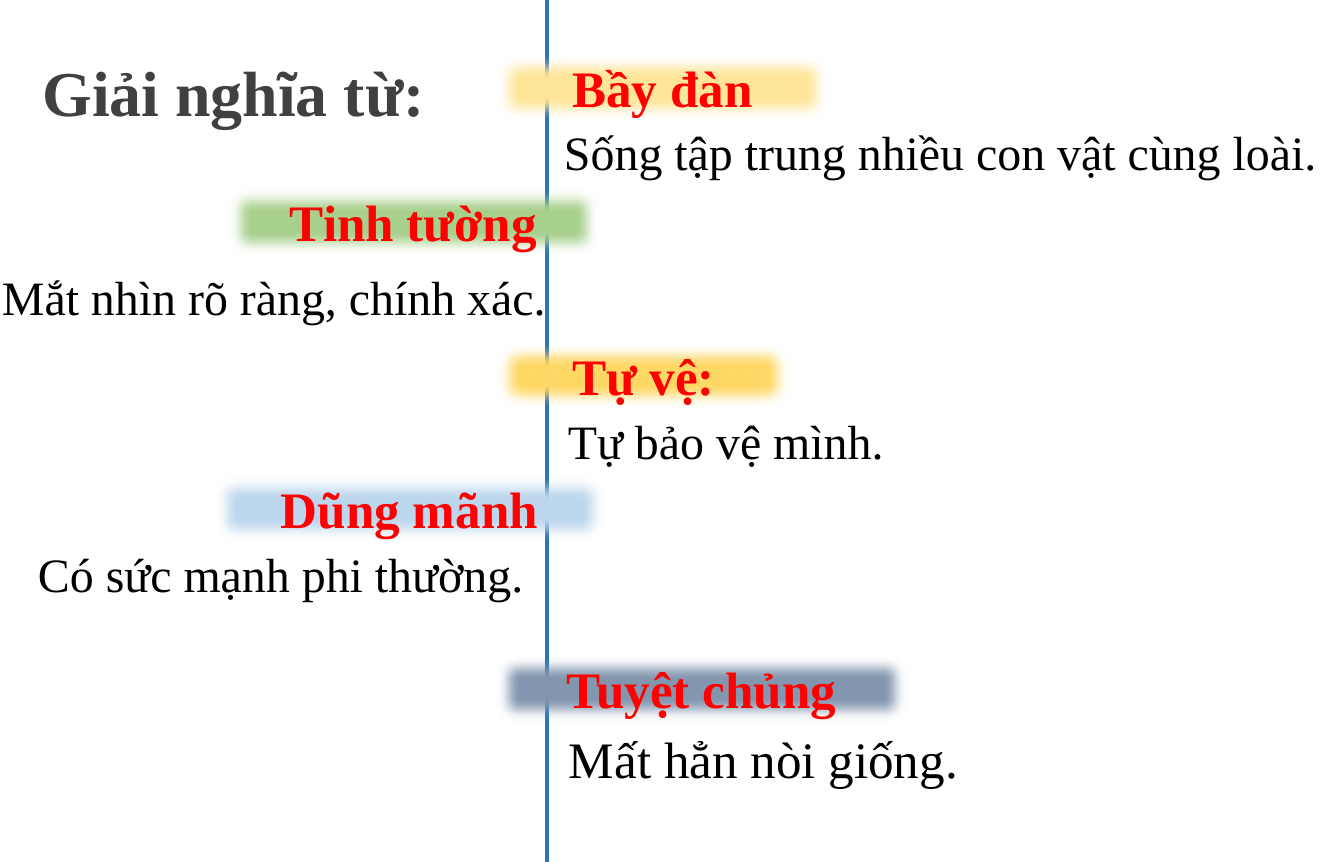
from dataclasses import dataclass

from lxml import etree
from pptx import Presentation
from pptx.dml.color import RGBColor
from pptx.enum.shapes import MSO_CONNECTOR, MSO_SHAPE
from pptx.enum.text import MSO_ANCHOR, PP_ALIGN
from pptx.oxml.ns import qn
from pptx.util import Emu, Pt

LEFT, CENTER, JUSTIFY = PP_ALIGN.LEFT, PP_ALIGN.CENTER, PP_ALIGN.JUSTIFY
TOP, MIDDLE = MSO_ANCHOR.TOP, MSO_ANCHOR.MIDDLE
RECTANGLE, STRAIGHT = MSO_SHAPE.RECTANGLE, MSO_CONNECTOR.STRAIGHT

PX_PER_INCH = 115
PAGE_WIDTH, PAGE_HEIGHT = 1344, 862
AXIS_X = 547
BAND_HEIGHT = 79


@dataclass(frozen=True)
class Theme:
    font: str = "Times New Roman"
    title: str = "404040"
    title_outline: str = "0D0D0D"
    term: str = "FF0000"
    meaning: str = "000000"
    axis: str = "2E75B6"
    title_size: int = 40
    term_size: int = 32
    meaning_size: int = 30


THEME = Theme()

# term, band colour, band (left, top, width),
# meaning, its box (left, top, width, height), alignment, size
ENTRIES = [
    ("Bầy đàn", "FFE699", (490, 48, 345),
     "Sống tập trung nhiều con vật cùng loài.", (547, 115, 797, 75),
     LEFT, THEME.meaning_size),
    ("Tinh tường", "A9D18E", (222, 182, 383),
     "Mắt nhìn rõ ràng, chính xác.", (-15, 260, 783, 75),
     LEFT, THEME.meaning_size),
    ("Tự vệ:", "FFD966", (490, 336, 307),
     "Tự bảo vệ mình.", (551, 404, 783, 75),
     LEFT, THEME.meaning_size),
    ("Dũng mãnh", "BDD7EE", (208, 469, 403),
     "Có sức mạnh phi thường.", (21, 537, 567, 75),
     JUSTIFY, THEME.meaning_size),
    ("Tuyệt chủng", "8497B0", (490, 649, 423),
     "Mất hẳn nòi giống.", (552, 719, 628, 79),
     LEFT, THEME.term_size),
]


def px(length):
    return Emu(round(length * 914400 / PX_PER_INCH))


def color(value):
    return RGBColor.from_string(value)


def write(shape, text, size, ink, bold=False, align=LEFT, anchor=TOP,
          insets=(17, 8)):
    frame = shape.text_frame
    frame.word_wrap = True
    frame.vertical_anchor = anchor
    frame.margin_left = frame.margin_right = px(insets[0])
    frame.margin_top = frame.margin_bottom = px(insets[1])
    para = frame.paragraphs[0]
    para.alignment = align
    span = para.add_run()
    span.text = text
    span.font.name = THEME.font
    span.font.size = Pt(size)
    span.font.bold = bold
    span.font.color.rgb = color(ink)
    return span


def add_title(page, box):
    title = page.shapes.add_textbox(*map(px, box))
    span = write(title, "Giải nghĩa từ:", THEME.title_size, THEME.title,
                 True, CENTER, MIDDLE, (14, 7))
    # Thin outline around the letters
    properties = span.font._element
    outline = etree.Element(qn("a:ln"), w=str(Pt(1.5)))
    fill = etree.SubElement(outline, qn("a:solidFill"))
    etree.SubElement(fill, qn("a:srgbClr"), val=THEME.title_outline)
    properties.insert(0, outline)


def add_axis(page, x, height):
    axis = page.shapes.add_connector(STRAIGHT, px(x), 0, px(x), px(height))
    axis.line.color.rgb = color(THEME.axis)
    axis.line.width = Pt(2.25)
    etree.SubElement(axis._element.spPr, qn("a:effectLst"))


def add_term(page, box, text, band_color):
    band = page.shapes.add_shape(RECTANGLE, *map(px, box))
    band.shadow.inherit = False
    band.fill.solid()
    band.fill.fore_color.rgb = color(band_color)
    band.line.color.rgb = color(band_color)
    band.line.width = Pt(0.75)
    # Blurred rim of the band
    effects = band._element.spPr.find(qn("a:effectLst"))
    etree.SubElement(effects, qn("a:softEdge"), rad=str(Pt(10)))
    write(band, text, THEME.term_size, THEME.term, True, CENTER)


def add_meaning(page, box, text, align, size):
    meaning = page.shapes.add_textbox(*map(px, box))
    write(meaning, text, size, THEME.meaning, align=align)


def add_glossary(page):
    add_title(page, (0, 15, 467, 152))
    add_axis(page, AXIS_X, PAGE_HEIGHT)
    for term, band_color, band, meaning, box, align, size in ENTRIES:
        add_term(page, (*band, BAND_HEIGHT), term, band_color)
        add_meaning(page, box, meaning, align, size)


def main():
    deck = Presentation()
    deck.slide_width, deck.slide_height = px(PAGE_WIDTH), px(PAGE_HEIGHT)
    page = deck.slides.add_slide(deck.slide_layouts[6])
    add_glossary(page)
    deck.save("out.pptx")


if __name__ == "__main__":
    main()
